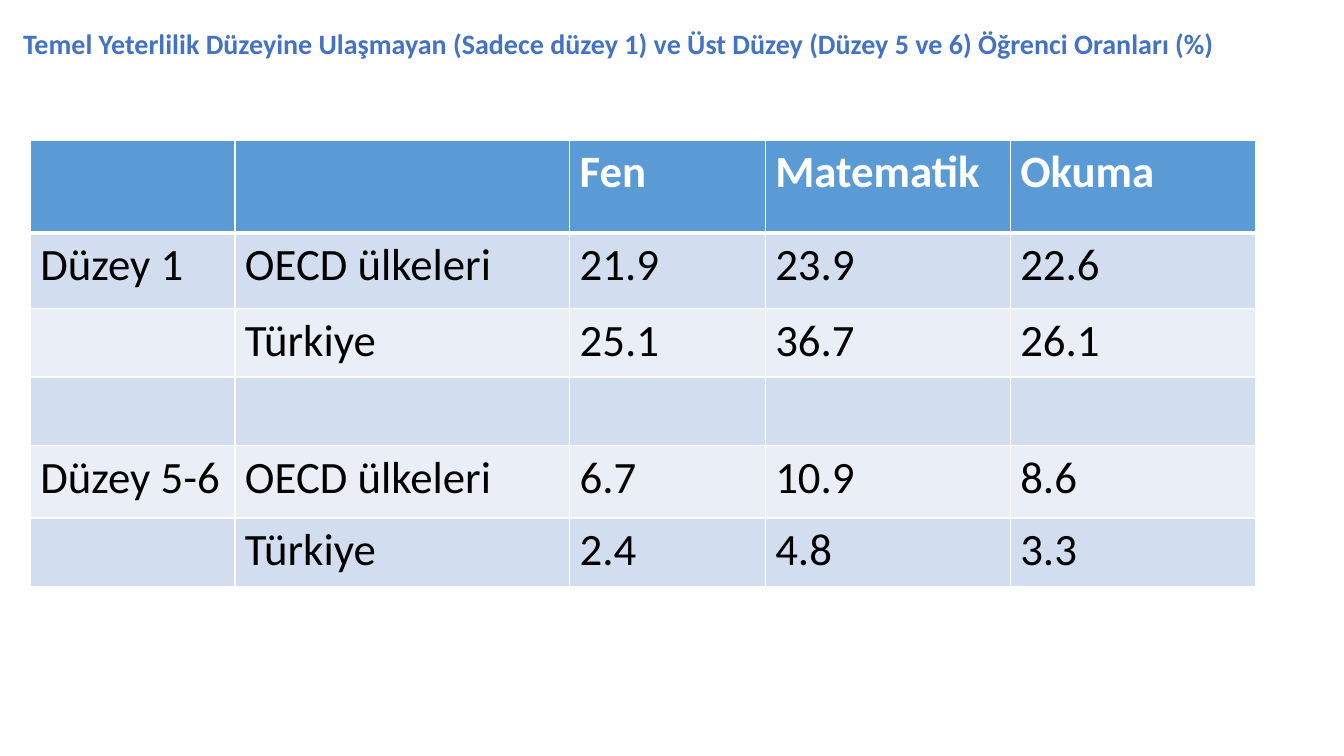
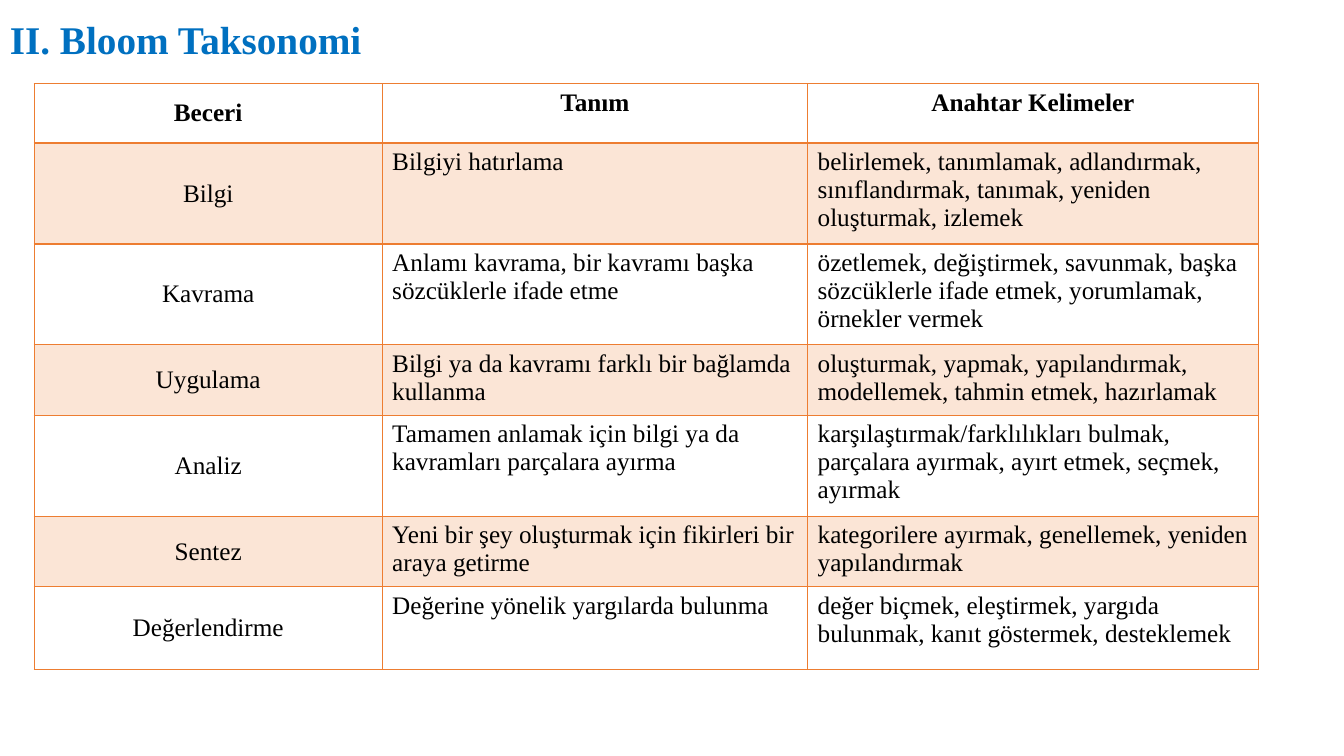
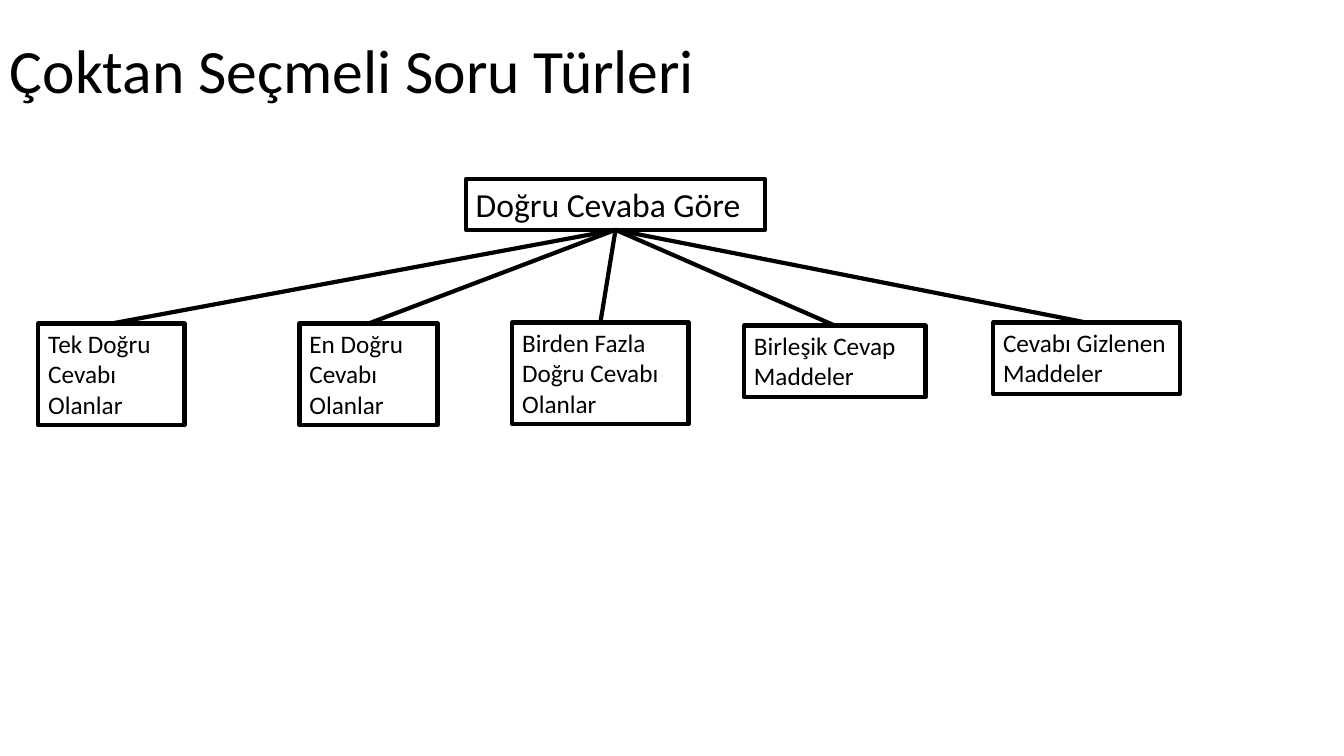
from lxml import etree
from pptx import Presentation
from pptx.dml.color import RGBColor
from pptx.enum.shapes import MSO_CONNECTOR as Connector, MSO_SHAPE as Shape
from pptx.enum.text import MSO_ANCHOR as Anchor, PP_ALIGN as Align
from pptx.oxml.ns import qn
from pptx.util import Inches, Pt

# Shared look
BLACK = RGBColor(0x00, 0x00, 0x00)
WHITE = RGBColor(0xFF, 0xFF, 0xFF)
INDIGO = RGBColor(0x44, 0x72, 0xC4)
BLUE = RGBColor(0x00, 0x70, 0xC0)
HEADER_BLUE = RGBColor(0x5B, 0x9B, 0xD5)
BAND_DARK = RGBColor(0xD2, 0xDE, 0xEF)
BAND_LIGHT = RGBColor(0xEA, 0xEF, 0xF7)
ORANGE = RGBColor(0xED, 0x7D, 0x31)
PEACH = RGBColor(0xFB, 0xE5, 0xD6)
SANS, SERIF = "Calibri", "Times New Roman"

# Content
LEVEL_ROWS = [
    ("", "", "Fen", "Matematik", "Okuma"),
    ("Düzey 1", "OECD ülkeleri", "21.9", "23.9", "22.6"),
    ("", "Türkiye", "25.1", "36.7", "26.1"),
    ("", "", "", "", ""),
    ("Düzey 5-6", "OECD ülkeleri", "6.7", "10.9", "8.6"),
    ("", "Türkiye", "2.4", "4.8", "3.3"),
]
BLOOM_ROWS = [
    ("Beceri", "Tanım", "Anahtar Kelimeler"),
    ("Bilgi", "Bilgiyi hatırlama",
     "belirlemek, tanımlamak, adlandırmak, sınıflandırmak, tanımak, yeniden oluşturmak, izlemek"),
    ("Kavrama", "Anlamı kavrama, bir kavramı başka\nsözcüklerle ifade etme",
     "özetlemek, değiştirmek, savunmak, başka sözcüklerle ifade etmek, yorumlamak, örnekler vermek"),
    ("Uygulama", "Bilgi ya da kavramı farklı bir bağlamda kullanma",
     "oluşturmak, yapmak, yapılandırmak,\nmodellemek, tahmin etmek, hazırlamak"),
    ("Analiz", "Tamamen anlamak için bilgi ya da\nkavramları parçalara ayırma",
     "karşılaştırmak/farklılıkları bulmak,\nparçalara ayırmak, ayırt etmek, seçmek, ayırmak"),
    ("Sentez", "Yeni bir şey oluşturmak için fikirleri bir araya getirme",
     "kategorilere ayırmak, genellemek, yeniden yapılandırmak"),
    ("Değerlendirme", "Değerine yönelik yargılarda bulunma",
     "değer biçmek, eleştirmek, yargıda\nbulunmak, kanıt göstermek, desteklemek"),
]
ROOT = ("Doğru Cevaba Göre", (4.62, 1.78, 2.97, 0.5))
BRANCHES = [
    ("Tek Doğru Cevabı Olanlar", (0.38, 3.21, 1.45, 1.01)),
    ("En Doğru Cevabı Olanlar", (2.97, 3.21, 1.37, 1.01)),
    ("Birden Fazla Doğru Cevabı Olanlar", (5.08, 3.2, 1.75, 1.01)),
    ("Birleşik Cevap Maddeler", (7.38, 3.23, 1.8, 0.71)),
    ("Cevabı Gizlenen Maddeler", (9.85, 3.2, 1.85, 0.71)),
]


def write(frame, text, size, font, color, bold=False, align=Align.LEFT, spacing=None):
    """Fill a text frame, one paragraph per line of text."""
    for index, line in enumerate(text.split("\n")):
        para = frame.paragraphs[0] if index == 0 else frame.add_paragraph()
        para.alignment = align
        if spacing:
            para.line_spacing = spacing
        span = para.add_run()
        span.text = line
        span.font.size, span.font.name, span.font.bold = Pt(size), font, bold
        span.font.color.rgb = color


def add_title(page, text, area, size, font, color, bold=False, spacing=0.9):
    frame = page.shapes.add_textbox(*map(Inches, area)).text_frame
    frame.word_wrap = True
    frame.vertical_anchor = Anchor.MIDDLE
    write(frame, text, size, font, color, bold, spacing=spacing)


def set_borders(cell, color, widths):
    """Draw left, right, top and bottom borders; widths are in points."""
    props = cell._tc.get_or_add_tcPr()
    for index, (side, width) in enumerate(zip("LRTB", widths)):
        line = etree.Element(qn(f"a:ln{side}"), w=str(Pt(width)))
        fill = etree.SubElement(line, qn("a:solidFill"))
        etree.SubElement(fill, qn("a:srgbClr"), val=str(color))
        props.insert(index, line)


def add_grid(page, rows, origin, widths, heights, size, font, header_color,
             fills, border, header_line, centred=False):
    """Add a table; fills are the header, odd-row and even-row colours."""
    area = (*origin, sum(widths), sum(heights))
    table = page.shapes.add_table(len(rows), len(widths), *map(Inches, area)).table
    table.first_row = table.horz_banding = False
    for column, width in zip(table.columns, widths):
        column.width = Inches(width)
    for r, (texts, height) in enumerate(zip(rows, heights)):
        table.rows[r].height = Inches(height)
        fill = fills[0] if r == 0 else fills[2 - r % 2]
        top = header_line if r == 1 else 1
        bottom = header_line if r == 0 else 1
        for c, text in enumerate(texts):
            cell = table.cell(r, c)
            if fill is None:
                cell.fill.background()
            else:
                cell.fill.solid()
                cell.fill.fore_color.rgb = fill
            set_borders(cell, border, (1, 1, top, bottom))
            if centred and c == 0:
                cell.vertical_anchor = Anchor.MIDDLE
            if text:
                middle = centred and (r == 0 or c == 0)
                write(cell.text_frame, text, size, font,
                      header_color if r == 0 else BLACK, r == 0,
                      Align.CENTER if middle else Align.LEFT)


def add_node(page, text, area, size):
    box = page.shapes.add_shape(Shape.RECTANGLE, *map(Inches, area))
    box.shadow.inherit = False
    box.fill.background()
    box.line.color.rgb, box.line.width = BLACK, Pt(3)
    box.text_frame.word_wrap = True
    box.text_frame.vertical_anchor = Anchor.TOP
    write(box.text_frame, text, size, SANS, BLACK)
    return box


def join(page, parent, child):
    """Connect the parent's bottom to the child's top."""
    line = page.shapes.add_connector(Connector.STRAIGHT, 0, 0, 0, 0)
    line.begin_connect(parent, 2)
    line.end_connect(child, 0)
    line.line.color.rgb, line.line.width = BLACK, Pt(3)
    etree.SubElement(line._element.spPr, qn("a:effectLst"))


def main():
    deck = Presentation()
    deck.slide_width, deck.slide_height = Inches(13.33), Inches(7.5)
    levels, bloom, tree = (deck.slides.add_slide(deck.slide_layouts[6]) for _ in range(3))

    # Proficiency levels
    add_title(levels, "Temel Yeterlilik Düzeyine Ulaşmayan (Sadece düzey 1) ve "
              "Üst Düzey (Düzey 5 ve 6) Öğrenci Oranları (%)",
              (0.13, 0.21, 12.12, 0.44), 20, SANS, INDIGO, True, spacing=None)
    add_grid(levels, LEVEL_ROWS, (0.3, 1.39), (2.03, 3.32, 1.94, 2.43, 2.43),
             (0.92, 0.75, 0.68, 0.68, 0.72, 0.68), 32, SANS, WHITE,
             (HEADER_BLUE, BAND_DARK, BAND_LIGHT), WHITE, 3)

    # Bloom taxonomy
    add_title(bloom, "II. Bloom Taksonomi", (0, 0, 9.33, 0.83), 28, SERIF, BLUE, True)
    add_grid(bloom, BLOOM_ROWS, (0.34, 0.83), (3.45, 4.22, 4.47),
             (0.59, 0.93, 0.93, 0.65, 0.93, 0.65, 0.82), 18, SERIF, BLACK,
             (None, PEACH, None), ORANGE, 2, centred=True)

    # Question types
    add_title(tree, "Çoktan Seçmeli Soru Türleri", (0, 0, 11.5, 1.45), 44, SANS, BLACK)
    root = add_node(tree, *ROOT, 24)
    for text, area in BRANCHES:
        join(tree, root, add_node(tree, text, area, 18))

    deck.save("out.pptx")


if __name__ == "__main__":
    main()
